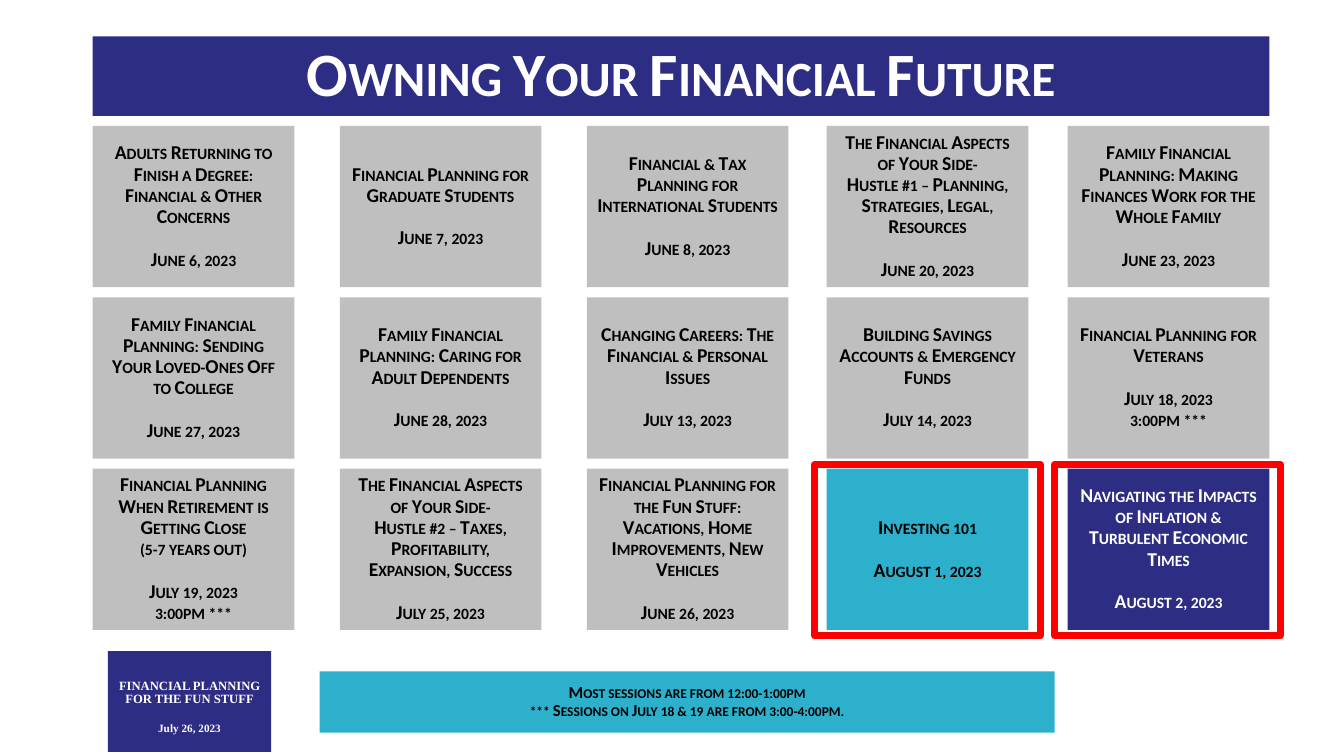
"""Build the schedule slide for the Owning Your Financial Future series."""
from lxml import etree
from pptx import Presentation
from pptx.dml.color import RGBColor
from pptx.enum import shapes, text
from pptx.oxml.ns import qn
from pptx.util import Inches, Pt

NAVY = RGBColor(0x2D, 0x2D, 0x83)
TEAL = RGBColor(0x2D, 0xB0, 0xCC)
GRAY = RGBColor(0xBF, 0xBF, 0xBF)
RED = RGBColor(0xFF, 0x00, 0x00)
BLACK = RGBColor(0x00, 0x00, 0x00)
WHITE = RGBColor(0xFF, 0xFF, 0xFF)

SESSION_ROWS = [
    [
        ("Adults Returning to Finish a Degree: Financial & Other Concerns", "June 6, 2023"),
        ("Financial Planning for Graduate Students", "June 7, 2023"),
        ("Financial & Tax Planning for International Students", "June 8, 2023"),
        ("The Financial Aspects of Your Side-\vHustle #1 – Planning, Strategies, Legal, Resources",
         "June 20, 2023"),
        ("Family Financial Planning: Making Finances Work for the Whole Family", "June 23, 2023"),
    ],
    [
        ("Family Financial Planning: Sending Your Loved-Ones Off to College", "June 27, 2023"),
        ("Family Financial Planning: Caring for Adult Dependents", "June 28, 2023"),
        ("Changing Careers: The Financial & Personal Issues", "July 13, 2023"),
        ("Building Savings Accounts & Emergency Funds", "July 14, 2023"),
        ("Financial Planning for Veterans", "July 18, 2023", "3:00pm ***"),
    ],
    [
        ("Financial Planning When Retirement is Getting Close\v(5-7 years out)",
         "July 19, 2023", "3:00pm ***"),
        ("The Financial Aspects of Your Side-\vHustle #2 – Taxes, Profitability, Expansion, Success",
         "July 25, 2023"),
        ("Financial Planning for the Fun Stuff: Vacations, Home Improvements, New Vehicles",
         "June 26, 2023"),
        ("Investing 101", "August 1, 2023"),
        ("Navigating the Impacts of Inflation & Turbulent Economic Times", "August 2, 2023"),
    ],
]
COLUMN_LEFTS = [0.92, 3.37, 5.82, 8.2, 10.59]
HIGHLIGHTS = {(2, 3): (TEAL, BLACK), (2, 4): (NAVY, WHITE)}

deck = Presentation()
deck.slide_width, deck.slide_height = Inches(13.33), Inches(7.5)
page = deck.slides.add_slide(deck.slide_layouts[6])


def add_box(left, top, width, height, fill=None):
    """Add a rectangle without outline or shadow."""
    box = page.shapes.add_shape(
        shapes.MSO_SHAPE.RECTANGLE, Inches(left), Inches(top), Inches(width), Inches(height))
    box.shadow.inherit = False
    box.line.fill.background()
    if fill is None:
        box.fill.background()
    else:
        box.fill.solid()
        box.fill.fore_color.rgb = fill
    return box


def write(box, lines, sizes, color, gap=0, font_name="Calibri", caps="small"):
    """Write centred bold paragraphs, with a gap above the second one."""
    frame = box.text_frame
    frame.word_wrap = True
    frame.vertical_anchor = text.MSO_ANCHOR.MIDDLE
    for index, (line, size) in enumerate(zip(lines, sizes)):
        para = frame.add_paragraph() if index else frame.paragraphs[0]
        para.text = line
        para.alignment = text.PP_ALIGN.CENTER
        para.line_spacing = 0.9
        if index == 1:
            para.space_before = Pt(gap)
        for line_break in para._p.findall(qn("a:br")):
            etree.SubElement(line_break, qn("a:rPr"), sz=str(size * 100))
        for span in para.runs:
            span.font.name = font_name
            span.font.size = Pt(size)
            span.font.bold = True
            span.font.color.rgb = color
            span._r.get_or_add_rPr().set("cap", caps)


fun_stuff = add_box(1.07, 6.46, 1.62, 1, NAVY)
fun_stuff.text_frame.margin_top = Inches(0.16)
write(fun_stuff, ["FINANCIAL PLANNING FOR THE FUN STUFF", "July 26, 2023"], [9, 8], WHITE,
      gap=11.5, font_name="Times New Roman", caps="none")

banner = add_box(0.92, 0.36, 11.67, 0.79, NAVY)
write(banner, ["Owning Your Financial Future"], [44], WHITE)

for row, sessions in enumerate(SESSION_ROWS):
    for column, (left, lines) in enumerate(zip(COLUMN_LEFTS, sessions)):
        fill, color = HIGHLIGHTS.get((row, column), (GRAY, BLACK))
        session = add_box(left, 1.25 + 1.7 * row, 2, 1.6, fill)
        write(session, lines, [14] * len(lines), color, gap=15.4)

times_note = add_box(3.17, 6.66, 7.29, 0.61, TEAL)
write(times_note,
      ["Most sessions are from 12:00-1:00pm\v*** Sessions on July 18 & 19 are from 3:00-4:00pm."],
      [12], BLACK)

for left in (8.08, 10.46):
    highlight = add_box(left, 4.61, 2.24, 1.7)
    highlight.line.color.rgb = RED
    highlight.line.width = Pt(5)

deck.save("out.pptx")
